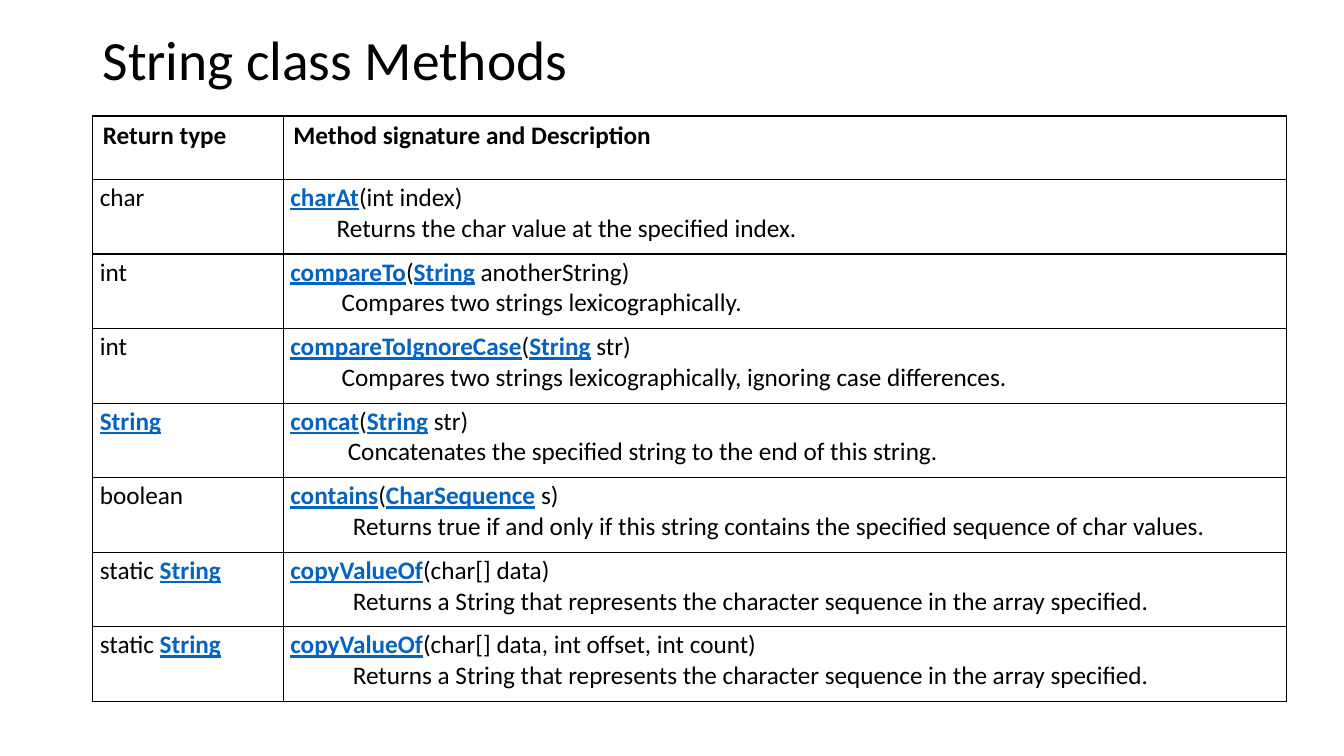
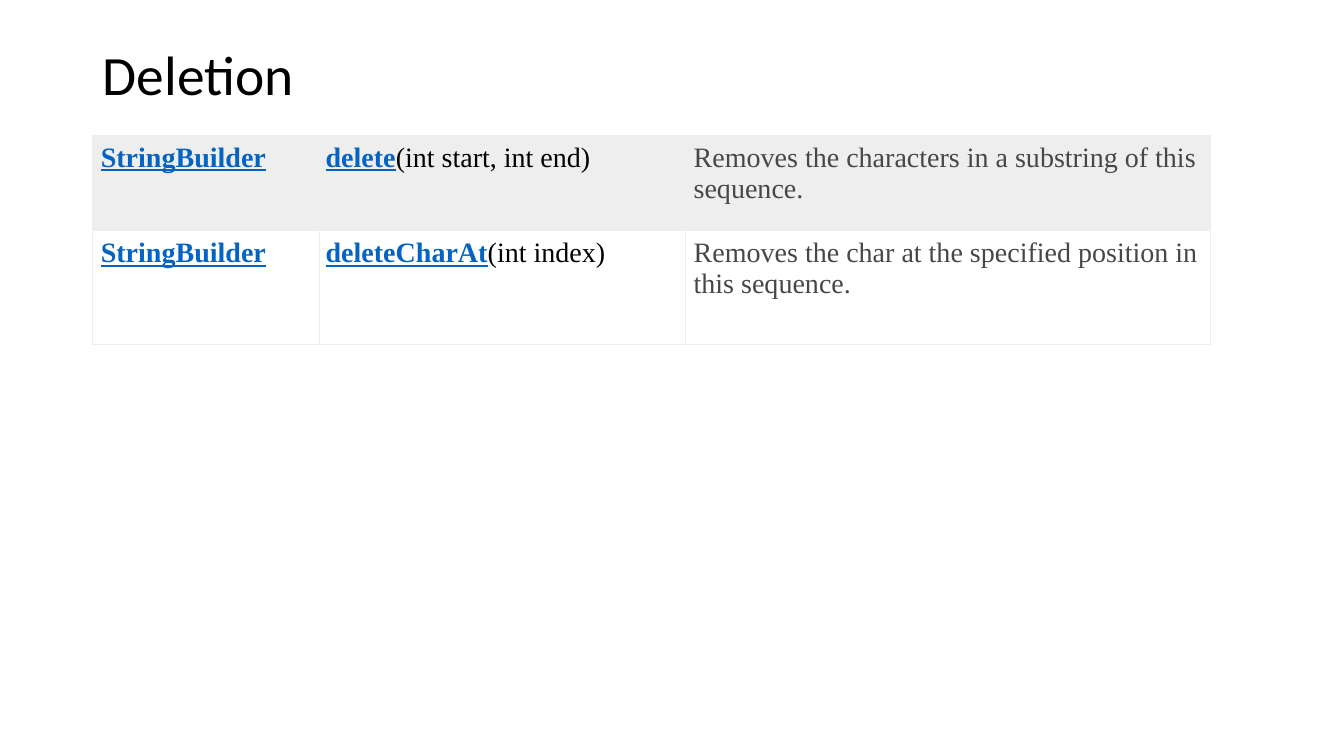
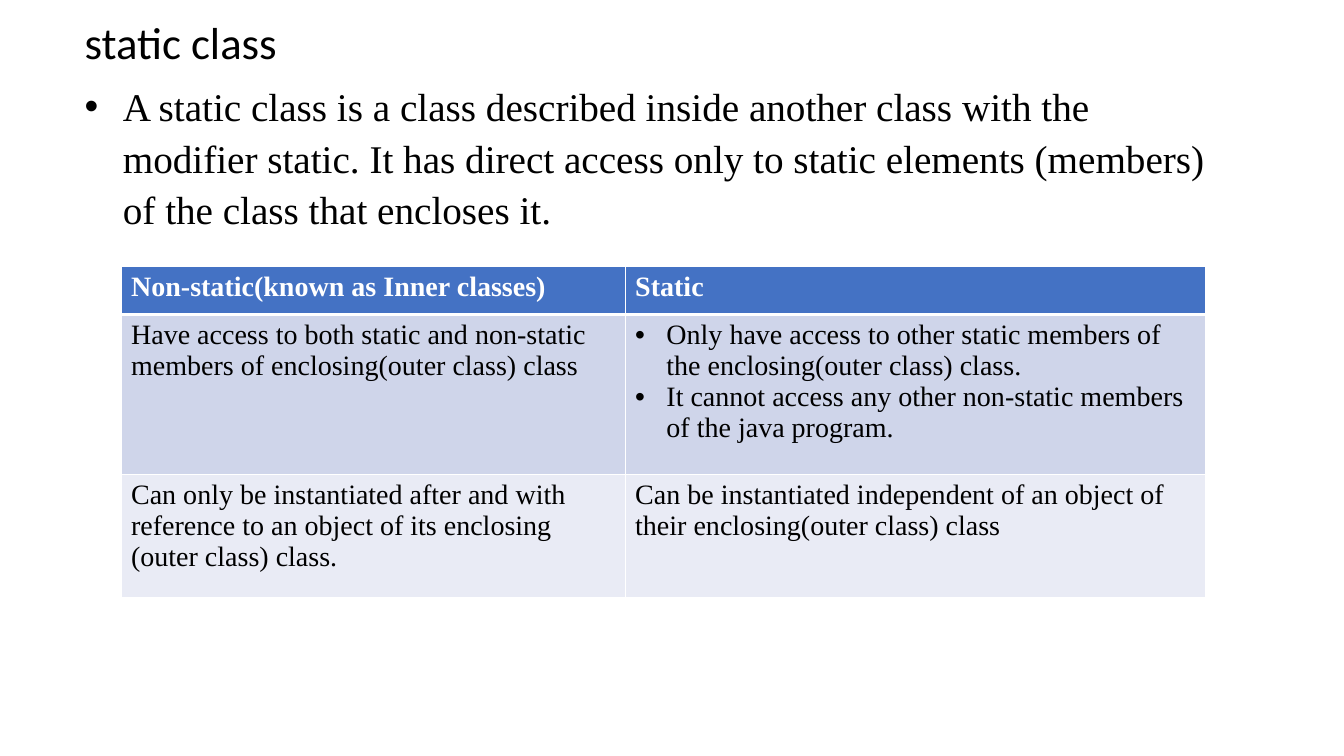
from lxml.etree import SubElement
from pptx import Presentation
from pptx.dml.color import RGBColor as RGB
from pptx.enum.text import MSO_ANCHOR as ANCHOR, MSO_AUTO_SIZE as AUTO_SIZE
from pptx.oxml.ns import qn
from pptx.util import Inches, Pt

COLORS = {
    "ink": "000000", "paper": "FFFFFF", "link": "0563C1", "gray": "474747",
    "rule": "EEEEEE", "shade": "EEEEEF",
    "header": "4472C4", "band": "CFD5EA", "light": "E9EBF5",
}
SANS, SERIF = "Calibri", "Times New Roman"
DEFAULT_INSETS = (0.1, 0.05, 0.1, 0.05)


def color(name):
    return RGB.from_string(COLORS[name])


def add_text(p, text, font=SANS, size=18, ink="ink", bold=False, indent=0,
             bullet=False, before=None, after=None, spacing=None):
    """Fill paragraph p; parts between asterisks are styled as links."""
    for name, value in (("space_before", before), ("space_after", after)):
        if value is not None:
            setattr(p, name, Pt(value))
    if spacing:
        p.line_spacing = spacing
    if indent:
        pPr = p._p.get_or_add_pPr()
        pPr.set("marL", str(Inches(indent)))
        pPr.set("indent", str(-Inches(indent) if bullet else 0))
        if bullet:
            SubElement(pPr, qn("a:buFont")).set("typeface", "Arial")
            SubElement(pPr, qn("a:buChar")).set("char", "•")
    for i, part in enumerate(text.split("*")):
        if not part:
            continue
        is_link = i % 2 == 1
        r = p.add_run()
        r.text = part
        r.font.name, r.font.size = font, Pt(size)
        r.font.bold = bold or is_link
        r.font.underline = is_link
        r.font.color.rgb = color("link" if is_link else ink)


def set_borders(cell, ink, widths):
    """Draw the left, right, top and bottom borders, widths in points."""
    tcPr = cell._tc.get_or_add_tcPr()
    for side, width in zip("LRTB", widths):
        ln = SubElement(tcPr, qn(f"a:ln{side}"), w=str(Pt(width)))
        fill = SubElement(ln, qn("a:solidFill"))
        SubElement(fill, qn("a:srgbClr"), val=COLORS[ink])


class Deck:
    def __init__(self):
        self.prs = Presentation()
        self.prs.slide_width, self.prs.slide_height = Inches(13.33), Inches(7.5)
        self.s = None

    def slide(self):
        self.s = self.prs.slides.add_slide(self.prs.slide_layouts[6])

    def text(self, at, text, anchor=ANCHOR.TOP, grow=False, **fmt):
        tf = self.s.shapes.add_textbox(*map(Inches, at)).text_frame
        tf.word_wrap = True
        tf.vertical_anchor = anchor
        tf.auto_size = AUTO_SIZE.SHAPE_TO_FIT_TEXT if grow else AUTO_SIZE.NONE
        add_text(tf.paragraphs[0], text, **fmt)

    def title(self, text, top, height):
        self.text((0.92, top, 11.5, height), text, ANCHOR.MIDDLE,
                  size=39.6, spacing=0.9)

    def table(self, left, top, widths, heights, rows, style):
        """Add a table; style(row, col) gives fill, border, insets."""
        box = map(Inches, (left, top, sum(widths), sum(heights)))
        table = self.s.shapes.add_table(len(rows), len(widths), *box).table
        table.first_row = table.horz_banding = False
        for column, width in zip(table.columns, widths):
            column.width = Inches(width)
        for i, (row, height) in enumerate(zip(rows, heights)):
            table.rows[i].height = Inches(height)
            for j, paragraphs in enumerate(row):
                cell = table.cell(i, j)
                fill, border, insets = style(i, j)
                set_borders(cell, *border)
                cell.fill.solid()
                cell.fill.fore_color.rgb = color(fill)
                (cell.margin_left, cell.margin_top,
                 cell.margin_right, cell.margin_bottom) = map(Inches, insets)
                tf = cell.text_frame
                for k, (text, fmt) in enumerate(paragraphs):
                    p = tf.add_paragraph() if k else tf.paragraphs[0]
                    add_text(p, text, **fmt)


def string_methods(deck):
    methods = [
        ("char", "*charAt*(int index)",
         "Returns the char value at the specified index.", 0.46),
        ("int", "*compareTo*(*String* anotherString)",
         "Compares two strings lexicographically.", 0.51),
        ("int", "*compareToIgnoreCase*(*String* str)",
         "Compares two strings lexicographically, ignoring case differences.", 0.51),
        ("*String*", "*concat*(*String* str)",
         "Concatenates the specified string to the end of this string.", 0.57),
        ("boolean", "*contains*(*CharSequence* s)",
         "Returns true if and only if this string contains the specified "
         "sequence of char values.", 0.62),
    ]
    methods += [
        ("static *String*", f"*copyValueOf*({arguments})",
         "Returns a String that represents the character sequence in the "
         "array specified.", 0.62)
        for arguments in ("char[] data", "char[] data, int offset, int count")
    ]
    rows = [[[(head, {"bold": True})]
             for head in ("Return type", "Method signature and Description")]]
    rows += [[[(kind, {})], [(signature, {}), (description, {"indent": indent})]]
             for kind, signature, description, indent in methods]

    def style(i, j):
        insets = (0.07, 0.03, 0.03, 0.03) if i else DEFAULT_INSETS
        return "paper", ("ink", [1] * 4), insets

    deck.slide()
    deck.title("String class Methods", 0.3, 0.64)
    deck.table(0.92, 1.15, [1.89, 9.95], [0.63] + [0.74] * len(methods), rows, style)


def deletion(deck):
    code = {"font": SERIF, "size": 20}
    note = {**code, "ink": "gray", "before": 2.2, "after": 1.5}
    methods = [
        ("*delete*(int start, int end)",
         "Removes the characters in a substring of this sequence."),
        ("*deleteCharAt*(int index)",
         "Removes the char at the specified position in this sequence."),
    ]
    rows = [[[("*StringBuilder*", code)], [(signature, code)], [(description, note)]]
            for signature, description in methods]

    def style(i, j):
        insets = (0.06 if j == 1 else 0.08, 0.07, 0.03, 0.03)
        return ("shade", "paper")[i], ("rule", [0.6] * 4), insets

    deck.slide()
    deck.title("Deletion", 0.4, 0.74)
    deck.table(0.92, 1.34, [2.25, 3.63, 5.2], [0.95, 1.13], rows, style)


def static_class(deck):
    body = {"font": SERIF, "size": 20}
    head = {**body, "ink": "paper", "bold": True}
    item = {**body, "indent": 0.31, "bullet": True}
    rows = [
        [[("Non-static(known as Inner classes)", head)], [("Static", head)]],
        [[("Have access to both static and non-static members of "
           "enclosing(outer class) class", body)],
         [("Only have access to other static members of the "
           "enclosing(outer class) class.", item),
          ("It cannot access any other non-static members of the java program.",
           item)]],
        [[("Can only be instantiated after and with reference to an object of "
           "its enclosing (outer class) class.", body)],
         [("Can be instantiated independent of an object of their "
           "enclosing(outer class) class", body)]],
    ]

    def style(i, j):
        widths = [1, 1, 3 if i == 1 else 1, 3 if i == 0 else 1]
        return ("header", "band", "light")[i], ("paper", widths), DEFAULT_INSETS

    deck.slide()
    deck.text((0.74, 0.73, 11.41, 1.51),
              "A static class is a class described inside another class with the "
              "modifier static. It has direct access only to static elements "
              "(members) of the class that encloses it.",
              grow=True, font=SERIF, size=28, indent=0.38, bullet=True,
              before=9.8, after=9.8, spacing=1.09)
    deck.table(1.2, 2.64, [5, 5.76], [0.48, 1.59, 1.22], rows, style)
    deck.text((0.74, 0.1, 6.67, 0.64), "static class", grow=True, size=32)


def main():
    deck = Deck()
    for build in (string_methods, deletion, static_class):
        build(deck)
    deck.prs.save("out.pptx")


if __name__ == "__main__":
    main()
